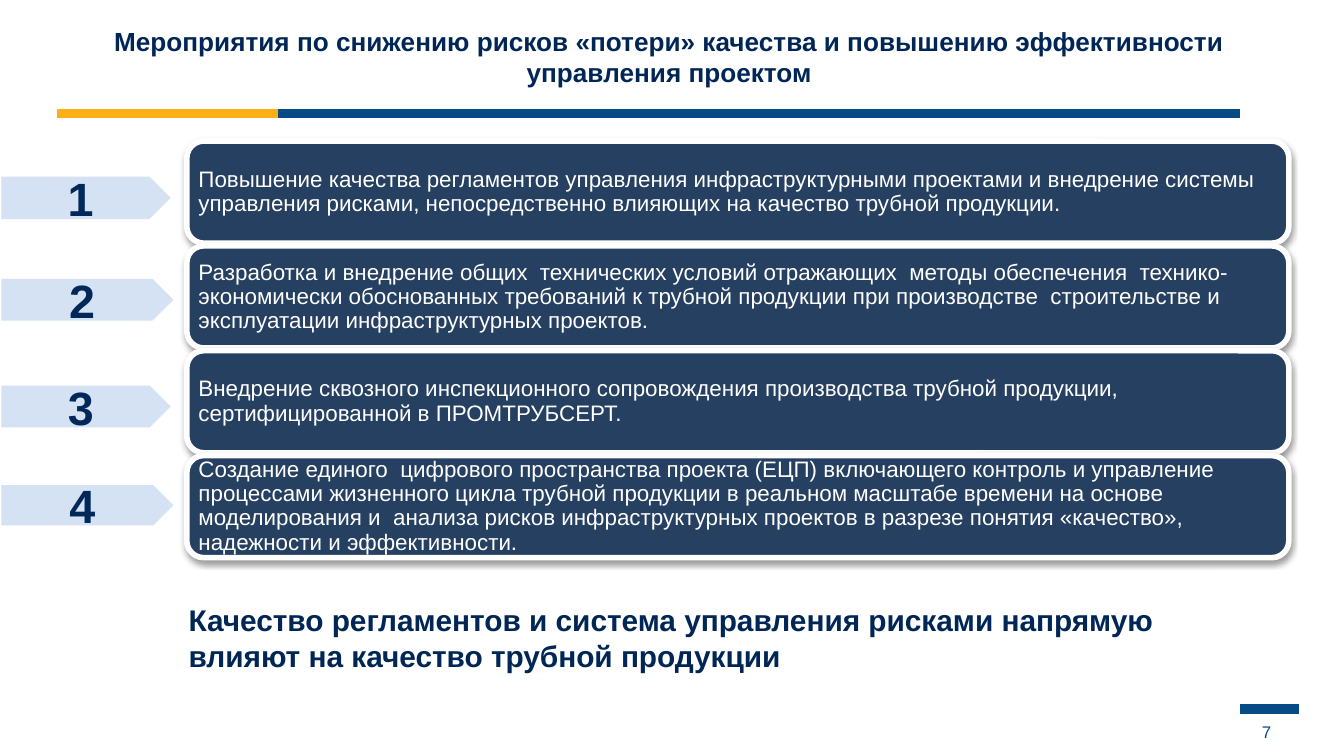
from dataclasses import dataclass

from lxml.etree import SubElement
from pptx import Presentation
from pptx.dml.color import RGBColor
from pptx.enum.shapes import MSO_CONNECTOR, MSO_SHAPE
from pptx.enum.text import MSO_ANCHOR, PP_ALIGN
from pptx.oxml.ns import qn
from pptx.util import Pt

EMU_PER_PX = 4572  # 200 px to the inch
BLUE = RGBColor(0x06, 0x4B, 0x85)
AMBER = RGBColor(0xFC, 0xAF, 0x17)
NAVY = RGBColor(0x00, 0x26, 0x56)
DIGIT_NAVY = RGBColor(0x00, 0x28, 0x58)
CARD_BLUE = RGBColor(0x25, 0x40, 0x61)
PALE_BLUE = RGBColor(0xC6, 0xD9, 0xF1)
WHITE = RGBColor(0xFF, 0xFF, 0xFF)

CARD_LEFT, CARD_TOP, CARD_WIDTH, CARD_HEIGHT, CARD_PITCH = 278, 210, 1640, 152, 156


@dataclass(frozen=True)
class Measure:
    text: str
    plate_top: int
    plate_width: int
    plate_height: int


@dataclass(frozen=True)
class Rule:
    left: int
    right: int
    y: int
    color: RGBColor


@dataclass(frozen=True)
class Caption:
    text: str
    box: tuple[int, int, int, int]
    size: int
    color: RGBColor
    bold: bool = True
    align: PP_ALIGN = PP_ALIGN.LEFT
    margins: tuple[int, int] = (16, 8)


MEASURES = [
    Measure("Повышение качества регламентов управления инфраструктурными проектами "
            "и внедрение системы управления рисками, непосредственно влияющих на "
            "качество трубной продукции.", 263, 252, 63),
    Measure("Разработка и внедрение общих  технических условий отражающих  методы "
            "обеспечения  технико-экономически обоснованных требований к трубной "
            "продукции при производстве  строительстве и эксплуатации "
            "инфраструктурных проектов.", 415, 256, 62),
    Measure("Внедрение сквозного инспекционного сопровождения производства трубной "
            "продукции, сертифицированной в ПРОМТРУБСЕРТ.", 574, 252, 62),
    Measure("Создание единого  цифрового пространства проекта (ЕЦП) включающего "
            "контроль и управление  процессами жизненного цикла трубной продукции в "
            "реальном масштабе времени на основе моделирования и  анализа рисков "
            "инфраструктурных проектов в разрезе понятия «качество», надежности и "
            "эффективности.", 722, 256, 60),
]
RULES = [Rule(1845, 1933, 1055, BLUE), Rule(85, 418, 169, AMBER),
         Rule(414, 1845, 169, BLUE)]
CAPTIONS = [
    Caption("7", (1862, 1066, 70, 46), 9, BLUE, bold=False),
    Caption("Мероприятия по снижению рисков «потери» качества и повышению "
            "эффективности управления проектом", (72, 29, 1848, 110), 14, NAVY,
            align=PP_ALIGN.CENTER),
    Caption("Качество регламентов и система управления рисками напрямую влияют на "
            "качество трубной продукции", (261, 886, 1492, 128), 16, NAVY,
            margins=(20, 10)),
]


def px(*lengths: int) -> list[int]:
    return [length * EMU_PER_PX for length in lengths]


def write(shape, text: str, size: int, color: RGBColor, bold: bool, align: PP_ALIGN,
          anchor: MSO_ANCHOR, margins: tuple[int, int], spacing: float = 1.0) -> None:
    frame = shape.text_frame
    side, end = px(*margins)
    paragraph = frame.paragraphs[0]
    paragraph.text = text
    formats = {
        frame: {"word_wrap": True, "vertical_anchor": anchor, "margin_left": side,
                "margin_right": side, "margin_top": end, "margin_bottom": end},
        paragraph: {"alignment": align, "line_spacing": spacing},
    }
    for target, values in formats.items():
        for name, value in values.items():
            setattr(target, name, value)
    font = paragraph.runs[0].font
    for name, value in {"name": "Arial", "size": Pt(size), "bold": bold}.items():
        setattr(font, name, value)
    font.color.rgb = color


def draw_rule(slide, rule: Rule) -> None:
    line = slide.shapes.add_connector(
        MSO_CONNECTOR.STRAIGHT, *px(rule.left, rule.y, rule.right, rule.y))
    line.line.color.rgb = rule.color
    line.line.width = Pt(5)
    SubElement(line._element.spPr, qn("a:effectLst"))


def draw_caption(slide, caption: Caption) -> None:
    box = slide.shapes.add_textbox(*px(*caption.box))
    write(box, caption.text, caption.size, caption.color, caption.bold,
          caption.align, MSO_ANCHOR.TOP, caption.margins)


def add_filled(slide, kind: MSO_SHAPE, box: tuple[int, int, int, int], fill: RGBColor):
    shape = slide.shapes.add_shape(kind, *px(*box))
    shape.shadow.inherit = False
    shape.fill.solid()
    shape.fill.fore_color.rgb = fill
    return shape


def draw_card(slide, index: int, measure: Measure) -> None:
    top = CARD_TOP + index * CARD_PITCH
    card = add_filled(slide, MSO_SHAPE.ROUNDED_RECTANGLE,
                      (CARD_LEFT, top, CARD_WIDTH, CARD_HEIGHT), CARD_BLUE)
    card.line.color.rgb = WHITE
    card.line.width = Pt(3)
    # Soft shadow below the card
    effects = card._element.spPr.find(qn("a:effectLst"))
    shadow = SubElement(effects, qn("a:outerShdw"), blurRad="40000", dist="20000",
                        dir="5400000", rotWithShape="0")
    shade = SubElement(shadow, qn("a:srgbClr"), val="000000")
    SubElement(shade, qn("a:alpha"), val="38000")
    write(card, measure.text, 12, WHITE, False, PP_ALIGN.LEFT, MSO_ANCHOR.MIDDLE,
          (10, 0), spacing=0.9)


def draw_number(slide, index: int, measure: Measure) -> None:
    plate = add_filled(slide, MSO_SHAPE.PENTAGON,
                       (2, measure.plate_top, measure.plate_width, measure.plate_height),
                       PALE_BLUE)
    plate.line.fill.background()
    tint = plate._element.spPr.find(qn("a:solidFill")).find(qn("a:srgbClr"))
    SubElement(tint, qn("a:alpha"), val="75000")
    write(plate, str(index + 1), 25, DIGIT_NAVY, True, PP_ALIGN.CENTER,
          MSO_ANCHOR.MIDDLE, (0, 0))


def main() -> None:
    deck = Presentation()
    deck.slide_width, deck.slide_height = px(2000, 1125)
    slide = deck.slides.add_slide(deck.slide_layouts[6])

    # Rules, title, conclusion and page number
    for rule in RULES:
        draw_rule(slide, rule)
    for caption in CAPTIONS:
        draw_caption(slide, caption)

    # Numbered measures
    for index, measure in enumerate(MEASURES):
        draw_card(slide, index, measure)
        draw_number(slide, index, measure)

    deck.save("out.pptx")


if __name__ == "__main__":
    main()
